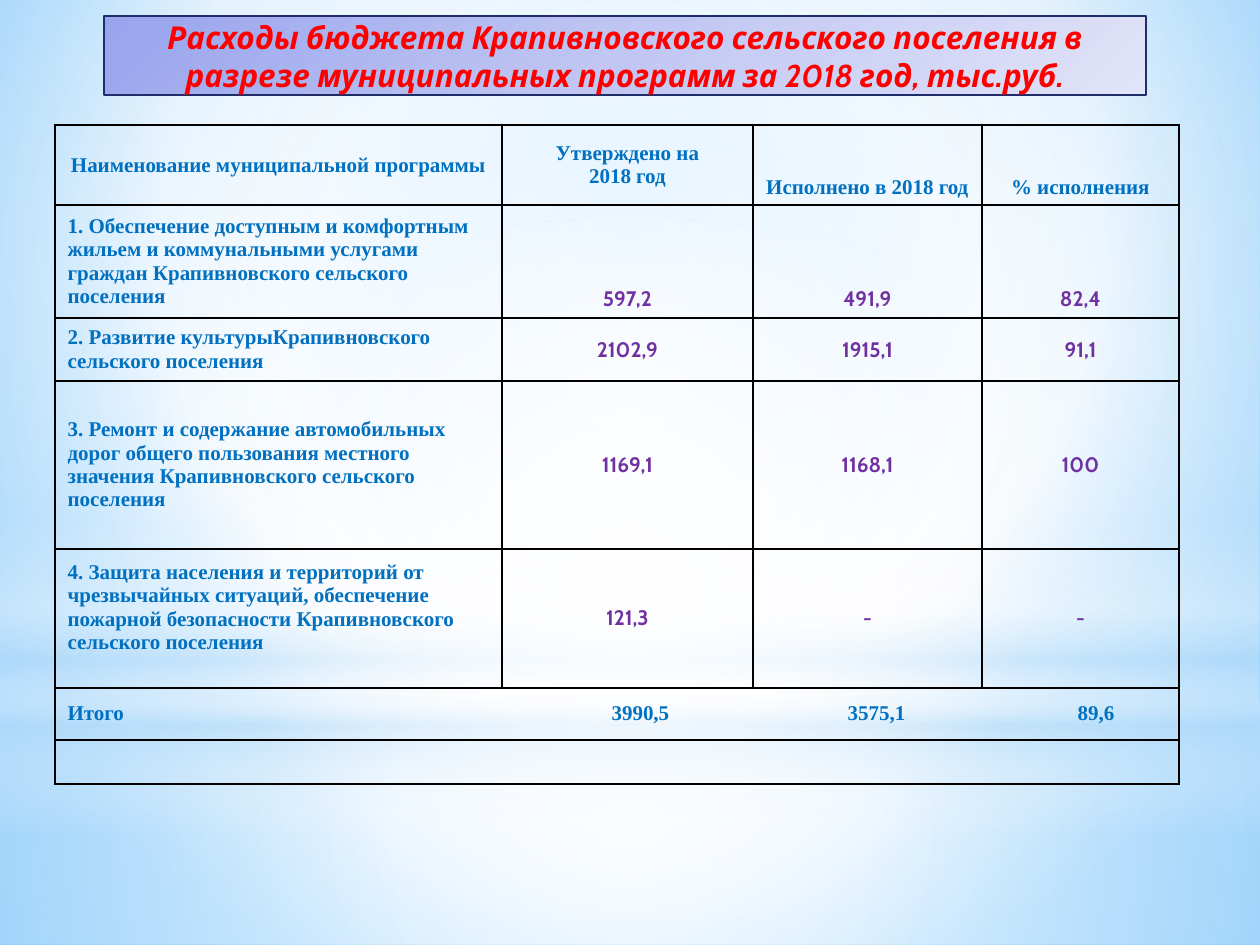
from dataclasses import dataclass

from lxml.etree import SubElement
from pptx import Presentation
from pptx.dml.color import RGBColor
from pptx.enum.shapes import MSO_SHAPE
from pptx.enum.text import MSO_ANCHOR, MSO_AUTO_SIZE, PP_ALIGN
from pptx.oxml import parse_xml
from pptx.oxml.ns import nsdecls, qn
from pptx.util import Emu, Pt


@dataclass(frozen=True)
class Theme:
    title_font: str = "Cabin"
    text_font: str = "Times New Roman"
    title_size: int = 18
    text_size: int = 12
    title_color: str = "FF0000"
    title_line: str = "1F2E69"
    label_color: str = "0070C0"
    value_color: str = "7030A0"
    border_color: str = "000000"
    white: str = "FFFFFF"
    haze: str = "B4DCFA"
    sky: tuple = ((0, "9ED5FF", 100), (60, "FFFFFF", 100), (100, "5BB9FF", 100))
    banner: tuple = ((0, "98A4ED", 100), (50, "C1C7F2", 100), (100, "E1E3F8", 100))


THEME = Theme()
CENTER = (50, 50, 50, 50)
COLUMN_WIDTHS = (447, 251, 229, 197)
ROW_HEIGHTS = (80, 113, 63, 168, 139, 52, 44)
TOTAL_TABS = (544, 780, 1010)
HEADINGS = ("Наименование муниципальной программы", "Утверждено на\n2018 год",
            "Исполнено в 2018 год", "% исполнения")
PROGRAMS = (
    ("1. Обеспечение доступным и комфортным жильем и коммунальными услугами "
     "граждан Крапивновского сельского поселения", "597,2", "491,9", "82,4"),
    ("2. Развитие культурыКрапивновского сельского поселения",
     "2102,9", "1915,1", "91,1"),
    ("3. Ремонт и содержание автомобильных дорог общего пользования местного "
     "значения Крапивновского сельского поселения", "1169,1", "1168,1", "100"),
    ("4. Защита населения и территорий от чрезвычайных ситуаций, обеспечение "
     "пожарной безопасности Крапивновского сельского поселения", "121,3", "-", "-"),
)
TOTALS = ("Итого", "3990,5", "3575,1", "89,6")


def px(length):
    return Emu(round(length * 914400 / 126))


def gradient(stops, focus=None, angle=0):
    marks = "".join(
        f'<a:gs pos="{pos * 1000}"><a:srgbClr val="{color}">'
        f'<a:alpha val="{alpha * 1000}"/></a:srgbClr></a:gs>'
        for pos, color, alpha in stops)
    if focus:
        sides = " ".join(f'{side}="{part * 1000}"' for side, part in zip("ltrb", focus))
        direction = f'<a:path path="circle"><a:fillToRect {sides}/></a:path>'
    else:
        direction = f'<a:lin ang="{angle * 60000}" scaled="0"/>'
    return parse_xml(f'<a:gradFill {nsdecls("a")} rotWithShape="1">'
                     f'<a:gsLst>{marks}</a:gsLst>{direction}</a:gradFill>')


def fill_gradient(fill, owner, **options):
    fill.solid()
    solid = owner.xpath(".//a:solidFill")[0]
    solid.getparent().replace(solid, gradient(**options))


def add_glow(slide, preset, top, height, **options):
    glow = slide.shapes.add_shape(preset, 0, px(top), px(1260), px(height))
    glow.shadow.inherit = False
    glow.line.fill.background()
    fill_gradient(glow.fill, glow._element.spPr, **options)


def add_backdrop(slide):
    white, haze = THEME.white, THEME.haze
    fill_gradient(slide.background.fill, slide._element.xpath("p:cSld/p:bg")[0],
                  stops=THEME.sky, focus=(20, 10, 20, 60))
    add_glow(slide, MSO_SHAPE.RECTANGLE, 703, 242, focus=CENTER,
             stops=((0, white, 91), (37, white, 76), (100, haze, 79)))
    add_glow(slide, MSO_SHAPE.RECTANGLE, 0, 703, focus=CENTER,
             stops=((0, white, 89), (48, white, 62), (100, haze, 79)))
    add_glow(slide, MSO_SHAPE.RECTANGLE, 519, 315, angle=90,
             stops=((0, white, 0), (29, white, 30), (45, haze, 40),
                    (55, white, 26), (65, haze, 60), (100, white, 0)))
    add_glow(slide, MSO_SHAPE.OVAL, 220, 703, focus=CENTER,
             stops=((0, white, 100), (56, white, 0)))


def style_font(font, name, size, color):
    font.name = name
    font.size = Pt(size)
    font.bold = True
    font.color.rgb = RGBColor.from_string(color)


def add_title(slide, text):
    title = slide.shapes.title
    slide.shapes._spTree.append(title._element)
    title.left, title.top, title.width, title.height = map(px, (104, 16, 1042, 79))
    fill_gradient(title.fill, title._element.spPr, stops=THEME.banner, angle=45)
    title.line.color.rgb = RGBColor.from_string(THEME.title_line)
    title.line.width = Pt(1.25)
    frame = title.text_frame
    frame.text = text
    frame.word_wrap = True
    frame.auto_size = MSO_AUTO_SIZE.NONE
    frame.vertical_anchor = MSO_ANCHOR.MIDDLE
    heading = frame.paragraphs[0]
    heading.alignment = PP_ALIGN.CENTER
    for run in heading.runs:
        style_font(run.font, THEME.title_font, THEME.title_size, THEME.title_color)
        run.font.italic = True


def draw_borders(cell):
    properties = cell._tc.get_or_add_tcPr()
    for position, side in enumerate(("lnL", "lnR", "lnT", "lnB")):
        properties.insert(position, parse_xml(
            f'<a:{side} {nsdecls("a")} w="{Pt(1)}"><a:solidFill>'
            f'<a:srgbClr val="{THEME.border_color}"/></a:solidFill></a:{side}>'))


def write_cell(cell, text, align=PP_ALIGN.CENTER, anchor=MSO_ANCHOR.MIDDLE,
               font=THEME.text_font, color=THEME.label_color):
    cell.text = text
    cell.vertical_anchor = anchor
    for paragraph in cell.text_frame.paragraphs:
        paragraph.alignment = align
        for run in paragraph.runs:
            style_font(run.font, font, THEME.text_size, color)


def write_totals(cell):
    write_cell(cell, "\t".join(TOTALS), align=PP_ALIGN.LEFT)
    properties = cell.text_frame.paragraphs[0]._p.get_or_add_pPr()
    tabs = SubElement(properties, qn("a:tabLst"))
    for stop in TOTAL_TABS:
        SubElement(tabs, qn("a:tab"), pos=str(px(stop)), algn="l")


def add_programs_table(slide):
    table = slide.shapes.add_table(
        len(ROW_HEIGHTS), len(COLUMN_WIDTHS), px(55), px(125),
        px(sum(COLUMN_WIDTHS)), px(sum(ROW_HEIGHTS))).table
    table.first_row = table.horz_banding = False
    for column, width in zip(table.columns, COLUMN_WIDTHS):
        column.width = px(width)
    for row, height in zip(table.rows, ROW_HEIGHTS):
        row.height = px(height)
    for cell in table.iter_cells():
        cell.fill.background()
        draw_borders(cell)

    for column, heading in enumerate(HEADINGS):
        anchor = MSO_ANCHOR.MIDDLE if column < 2 else MSO_ANCHOR.BOTTOM
        write_cell(table.cell(0, column), heading, anchor=anchor)
    for row, (program, *amounts) in enumerate(PROGRAMS, start=1):
        write_cell(table.cell(row, 0), program, align=PP_ALIGN.LEFT)
        anchor = MSO_ANCHOR.BOTTOM if row == 1 else MSO_ANCHOR.MIDDLE
        for column, amount in enumerate(amounts, start=1):
            write_cell(table.cell(row, column), amount, anchor=anchor,
                       font=THEME.title_font, color=THEME.value_color)
    table.cell(len(PROGRAMS), 0).margin_bottom = px(28)

    total_row = len(PROGRAMS) + 1
    for row in (total_row, total_row + 1):
        table.cell(row, 0).merge(table.cell(row, len(COLUMN_WIDTHS) - 1))
    write_totals(table.cell(total_row, 0))
    table.cell(total_row + 1, 0).text_frame.paragraphs[0].font.size = Pt(THEME.text_size)


def main():
    presentation = Presentation()
    presentation.slide_width, presentation.slide_height = px(1260), px(945)
    slide = presentation.slides.add_slide(presentation.slide_layouts[5])
    add_backdrop(slide)
    add_title(slide, "Расходы бюджета Крапивновского сельского поселения в "
                     "разрезе муниципальных программ за 2018 год, тыс.руб.")
    add_programs_table(slide)
    presentation.save("out.pptx")


if __name__ == "__main__":
    main()
